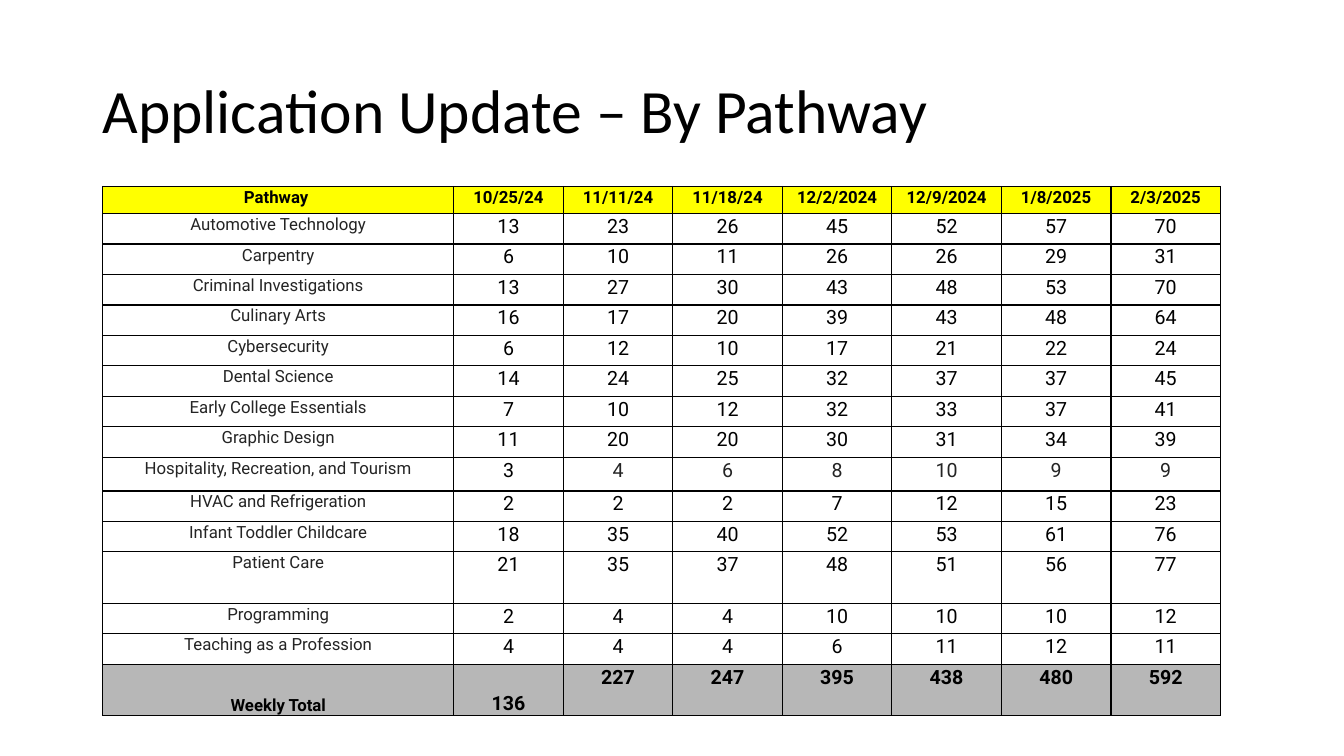
from lxml.etree import SubElement
from pptx import Presentation
from pptx.dml.color import RGBColor
from pptx.enum.text import MSO_ANCHOR, MSO_AUTO_SIZE, PP_ALIGN
from pptx.oxml.ns import qn
from pptx.util import Pt

BLACK = RGBColor(0x00, 0x00, 0x00)
CHARCOAL = RGBColor(0x24, 0x24, 0x24)
WHITE = RGBColor(0xFF, 0xFF, 0xFF)
YELLOW = RGBColor(0xFF, 0xFF, 0x00)
GRAY = RGBColor(0xB7, 0xB7, 0xB7)

HEADINGS = ("Pathway ", "10/25/24", "11/11/24", "11/18/24",
            "12/2/2024", "12/9/2024", "1/8/2025", "2/3/2025")
PATHWAYS = [
    ("Automotive Technology", 13, 23, 26, 45, 52, 57, 70),
    ("Carpentry", 6, 10, 11, 26, 26, 29, 31),
    ("Criminal Investigations", 13, 27, 30, 43, 48, 53, 70),
    ("Culinary Arts", 16, 17, 20, 39, 43, 48, 64),
    ("Cybersecurity", 6, 12, 10, 17, 21, 22, 24),
    ("Dental Science", 14, 24, 25, 32, 37, 37, 45),
    ("Early College Essentials", 7, 10, 12, 32, 33, 37, 41),
    ("Graphic Design", 11, 20, 20, 30, 31, 34, 39),
    ("Hospitality, Recreation, and Tourism", 3, 4, 6, 8, 10, 9, 9),
    ("HVAC and Refrigeration", 2, 2, 2, 7, 12, 15, 23),
    ("Infant Toddler Childcare", 18, 35, 40, 52, 53, 61, 76),
    ("Patient Care", 21, 35, 37, 48, 51, 56, 77),
    ("Programming", 2, 4, 4, 10, 10, 10, 12),
    ("Teaching as a Profession", 4, 4, 4, 6, 11, 12, 11),
]
TOTALS = ("Weekly Total", 136, 227, 247, 395, 438, 480, 592)

HEADING_HEIGHT = 19.4
ROW_HEIGHT = 21.75
TALL_ROWS = {"Hospitality, Recreation, and Tourism": 24.2,
             "Patient Care": 36.8, "Weekly Total": 36.8}
NAME_SHARE = 0.314


def add_title(page, text, left, top, width, height):
    title = page.shapes.title
    title.left, title.top, title.width, title.height = map(Pt, (left, top, width, height))
    frame = title.text_frame
    frame.text = text
    frame.auto_size = MSO_AUTO_SIZE.NONE
    frame.vertical_anchor = MSO_ANCHOR.MIDDLE
    para = frame.paragraphs[0]
    para.alignment = PP_ALIGN.LEFT
    para.line_spacing = 0.9
    font = para.runs[0].font
    font.name, font.size, font.color.rgb = "Calibri", Pt(44), BLACK


def add_borders(cell):
    properties = cell._tc.get_or_add_tcPr()
    for side in ("lnL", "lnR", "lnT", "lnB"):
        line = SubElement(properties, qn(f"a:{side}"), w=str(Pt(1)))
        fill = SubElement(line, qn("a:solidFill"))
        SubElement(fill, qn("a:srgbClr"), val=str(BLACK))


def fill_cell(cell, text, size, color, background, bold, inset):
    add_borders(cell)
    cell.fill.solid()
    cell.fill.fore_color.rgb = background
    cell.margin_left = cell.margin_right = Pt(inset)
    cell.margin_top = cell.margin_bottom = 0
    cell.text_frame.text = text
    para = cell.text_frame.paragraphs[0]
    para.alignment = PP_ALIGN.CENTER
    para.line_spacing = 1.07
    para.space_after = Pt(8)
    font = para.runs[0].font
    font.name, font.size, font.bold, font.color.rgb = "Roboto", Pt(size), bold, color


def add_pathway_table(page, left, top, width):
    """Draw the counts per pathway and date; the row heights set the table's height."""
    records = [HEADINGS, *PATHWAYS, TOTALS]
    heights = [HEADING_HEIGHT] + [TALL_ROWS.get(record[0], ROW_HEIGHT) for record in records[1:]]
    table = page.shapes.add_table(len(records), len(HEADINGS), Pt(left), Pt(top),
                                  Pt(width), Pt(sum(heights))).table
    name_width = width * NAME_SHARE
    date_width = (width - name_width) / (len(HEADINGS) - 1)
    for index, column in enumerate(table.columns):
        column.width = Pt(date_width if index else name_width)

    for row_index, record in enumerate(records):
        table.rows[row_index].height = Pt(heights[row_index])
        heading, total = record is HEADINGS, record is TOTALS
        background = YELLOW if heading else GRAY if total else WHITE
        for column_index, value in enumerate(record):
            cell = table.cell(row_index, column_index)
            name = column_index == 0
            soft = name or (record[0].startswith("Hospitality") and column_index > 1)
            fill_cell(cell, str(value),
                      size=12 if heading or name else 14,
                      color=CHARCOAL if soft and not (heading or total) else BLACK,
                      background=background,
                      bold=heading or total,
                      inset=5 if column_index < 2 else 0)
            if total and column_index < 2:
                cell.vertical_anchor = MSO_ANCHOR.BOTTOM


def main():
    deck = Presentation()
    deck.slide_width, deck.slide_height = Pt(960), Pt(540)
    page = deck.slides.add_slide(deck.slide_layouts[5])
    add_title(page, "Application Update – By Pathway", 66, 28.8, 828, 104.4)
    add_pathway_table(page, 73.4, 133.2, 798.5)
    deck.save("out.pptx")


if __name__ == "__main__":
    main()
